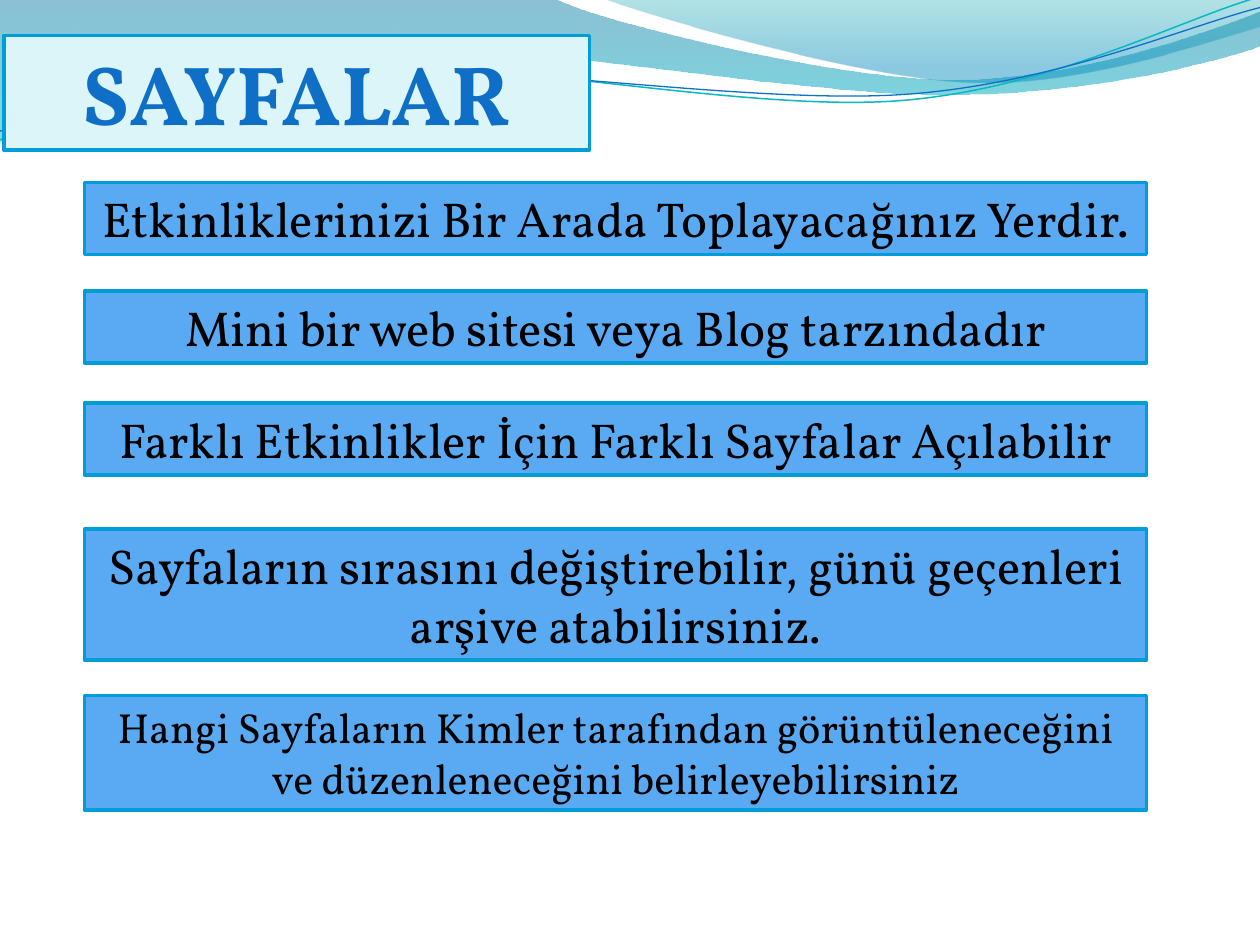
from dataclasses import dataclass
from math import cos, radians, sin
from lxml.etree import SubElement
from pptx import Presentation
from pptx.dml.color import RGBColor as RGB
from pptx.enum.shapes import MSO_SHAPE as SHAPE
from pptx.enum.text import MSO_ANCHOR as ANCHOR, MSO_AUTO_SIZE as AUTO, PP_ALIGN as ALIGN
from pptx.oxml.ns import qn
from pptx.util import Inches, Pt


@dataclass(frozen=True)
class Theme:
    font: str = "Vollkorn"
    title: str = "0F6FC6"
    title_fill: str = "DBF5F9"
    box_fill: str = "59AAF2"
    border: str = "009DD9"
    text: str = "000000"
    title_size: int = 48
    large: int = 28
    small: int = 24
    border_width: int = 2


T = Theme()
W, H = 10, 7.5

TITLE = "SAYFALAR"
# text, type size, top, height
BOXES = [
    ("Etkinliklerinizi Bir Arada Toplayacağınız Yerdir.", T.large, 1.45, 0.57),
    ("Mini bir web sitesi veya Blog tarzındadır", T.large, 2.31, 0.57),
    ("Farklı Etkinlikler İçin Farklı Sayfalar Açılabilir", T.large, 3.2, 0.57),
    ("Sayfaların sırasını değiştirebilir, günü geçenleri arşive atabilirsiniz.",
     T.large, 4.2, 1.04),
    ("Hangi Sayfaların Kimler tarafından görüntüleneceğini "
     "ve düzenleneceğini belirleyebilirsiniz", T.small, 5.52, 0.91),
]
BOX_LEFT, BOX_WIDTH = 0.67, 8.43

# A path is a list of steps: one point for a start or a line, three for a Bezier curve.
# Gradient stops: position, colour, opacity in percent.
BANDS = [
    ([[(0, -0.01)], [(4.4, -0.01)],
      [(4.76, 0.17), (6.64, 0.63), (7.58, 0.63)],
      [(8.53, 0.63), (9.58, 0.26), (10, 0.09)], [(10.01, 0.36)],
      [(9.83, 0.44), (8.7, 0.76), (7.46, 0.75)],
      [(6.22, 0.75), (3.82, 0.28), (2.57, 0.34)],
      [(1.29, 0.35), (0.46, 0.83), (-0.01, 1.13)]],
     [(0, "0074A1", 45), (1, "00C6CF", 55)]),
    ([[(4.79, -0.01)],
      [(5.09, 0.11), (6.82, 0.62), (7.69, 0.65)],
      [(8.56, 0.69), (9.61, 0.32), (10, 0.21)], [(10, 0)]],
     [(0, "00A1A9", 30), (0.8, "008BBF", 45)]),
]
# path, centre, colour, width
STRANDS = [
    ([[(0, 1.11)], [(0.48, 0.93), (1.58, 0.57), (2.77, 0.52)],
      [(3.95, 0.47), (5.93, 0.89), (7.13, 0.8)],
      [(8.33, 0.71), (9.38, 0.15), (9.98, -0.02)]], (4.99, 0.57), "0AB8BF", 0.85),
    ([[(0, 1.04)], [(0.47, 0.96), (1.64, 0.61), (2.83, 0.56)],
      [(4.03, 0.51), (5.97, 0.83), (7.17, 0.75)],
      [(8.36, 0.67), (9.41, 0.21), (10, 0.06)]], (5, 0.59), "0F6FC6", 0.75),
]
STRAND_TILT = 2.7


def add_path(shapes, path, close):
    """Build the outline from its end points, then bend the curved segments."""
    ends = [(Inches(step[-1][0]), Inches(step[-1][1])) for step in path]
    fb = shapes.build_freeform(*ends[0])
    fb.add_line_segments(ends[1:], close=close)
    sp = fb.convert_to_shape()
    sp.shadow.inherit = False
    lines = list(sp._element.spPr.iter(qn("a:lnTo")))
    for line, step in zip(lines, path[1:]):
        if len(step) == 3:
            curve = line.makeelement(qn("a:cubicBezTo"))
            for x, y in step:
                pt = SubElement(curve, qn("a:pt"))
                pt.set("x", str(Inches(x) - sp.left))
                pt.set("y", str(Inches(y) - sp.top))
            line.getparent().replace(line, curve)
    return sp


def add_band(shapes, path, stops):
    sp = add_path(shapes, path, True)
    sp.line.fill.background()
    sp.fill.gradient()
    sp.fill.gradient_angle = 270
    for stop, (position, color, _) in zip(sp.fill.gradient_stops, stops):
        stop.position = position
        stop.color.rgb = RGB.from_string(color)
    for clr, (_, _, opacity) in zip(sp._element.spPr.iter(qn("a:srgbClr")), stops):
        SubElement(clr, qn("a:alpha")).set("val", str(opacity * 1000))


def turn(point, center, degrees):
    a = radians(degrees)
    dx, dy = point[0] - center[0], point[1] - center[1]
    return center[0] + dx * cos(a) - dy * sin(a), center[1] + dx * sin(a) + dy * cos(a)


def add_strand(shapes, path, center, color, width):
    """Draw the path level, then tilt the shape back into place."""
    level = [[turn(pt, center, STRAND_TILT) for pt in step] for step in path]
    sp = add_path(shapes, level, False)
    sp.rotation = 360 - STRAND_TILT
    sp.fill.background()
    sp.line.color.rgb = RGB.from_string(color)
    sp.line.width = Pt(width)


def format_box(sp, text, size, color, fill, bold=False):
    sp.fill.solid()
    sp.fill.fore_color.rgb = RGB.from_string(fill)
    sp.line.color.rgb = RGB.from_string(T.border)
    sp.line.width = Pt(T.border_width)
    tf = sp.text_frame
    tf.word_wrap = True
    tf.auto_size = AUTO.SHAPE_TO_FIT_TEXT
    tf.vertical_anchor = ANCHOR.TOP
    p = tf.paragraphs[0]
    p.alignment = ALIGN.CENTER
    r = p.add_run()
    r.text = text
    r.font.name, r.font.size, r.font.bold = T.font, Pt(size), bold
    r.font.color.rgb = RGB.from_string(color)


def main():
    prs = Presentation()
    prs.slide_width, prs.slide_height = Inches(W), Inches(H)
    s = prs.slides.add_slide(prs.slide_layouts[5])

    for band in BANDS:
        add_band(s.shapes, *band)
    strands = s.shapes.add_group_shape()
    for strand in STRANDS:
        add_strand(strands.shapes, *strand)

    title = s.shapes.title
    s.shapes._spTree.append(title._element)  # bring in front of the waves
    title.left, title.top, title.width, title.height = map(Inches, (0.03, 0.28, 4.65, 0.91))
    format_box(title, TITLE, T.title_size, T.title, T.title_fill, bold=True)

    for text, size, top, height in BOXES:
        sp = s.shapes.add_shape(SHAPE.RECTANGLE, *map(Inches, (BOX_LEFT, top, BOX_WIDTH, height)))
        sp.shadow.inherit = False
        format_box(sp, text, size, T.text, T.box_fill)

    prs.save("out.pptx")


if __name__ == "__main__":
    main()
